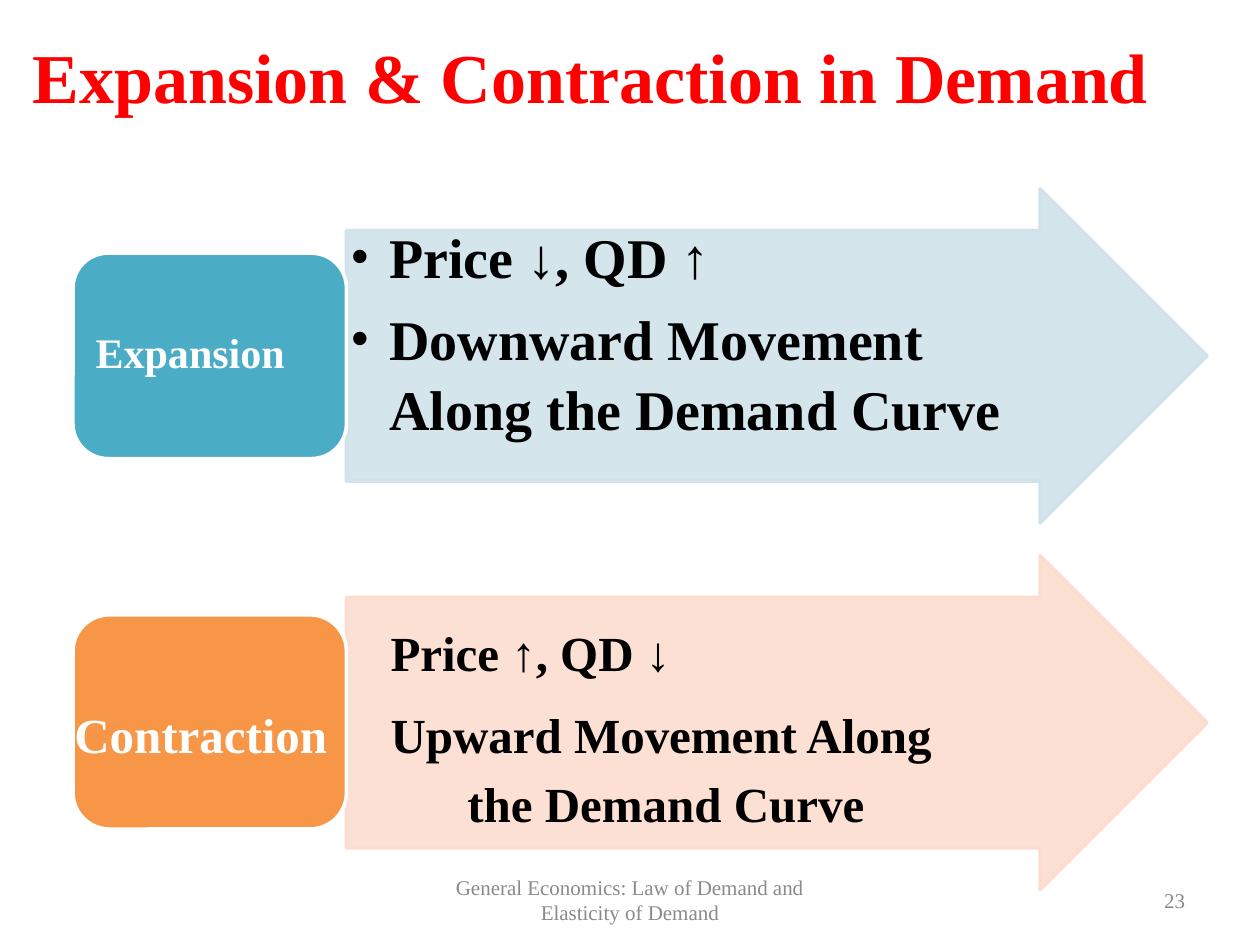
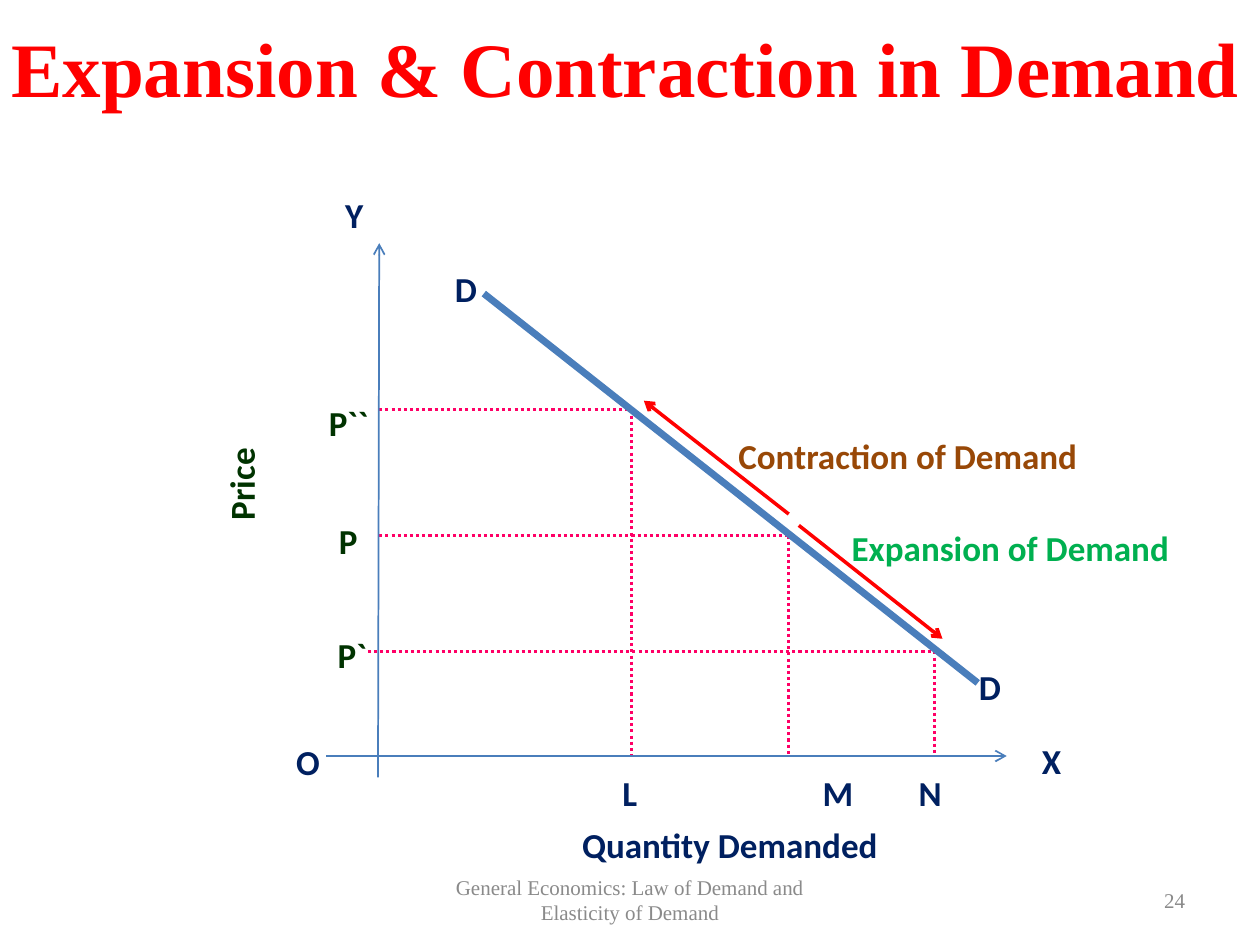
from lxml.etree import SubElement
from pptx import Presentation
from pptx.dml.color import RGBColor
from pptx.enum.dml import MSO_LINE
from pptx.enum.shapes import MSO_CONNECTOR, MSO_SHAPE
from pptx.enum.text import PP_ALIGN
from pptx.oxml.ns import qn
from pptx.util import Pt

SCALE = 9144
SERIF, SANS = "Times New Roman", "Calibri"
RED = RGBColor(0xFF, 0x00, 0x00)
BLACK = RGBColor(0x00, 0x00, 0x00)
WHITE = RGBColor(0xFF, 0xFF, 0xFF)
GREY = RGBColor(0x8A, 0x8A, 0x8A)
TEAL = RGBColor(0x4B, 0xAC, 0xC6)
PALE_TEAL = RGBColor(0xD0, 0xE3, 0xEA)
ORANGE = RGBColor(0xF7, 0x96, 0x46)
PALE_ORANGE = RGBColor(0xFC, 0xDD, 0xCF)
NAVY = RGBColor(0x00, 0x20, 0x60)
DARK_GREEN = RGBColor(0x00, 0x33, 0x00)
GREEN = RGBColor(0x00, 0xB0, 0x50)
BROWN = RGBColor(0x98, 0x48, 0x07)
PINK = RGBColor(0xFF, 0x00, 0x66)
BLUE = RGBColor(0x4A, 0x7E, 0xBB)

TITLE = "Expansion & Contraction in Demand"
FOOTER = ["General Economics: Law of Demand and", "Elasticity of Demand"]

MOVEMENTS = [
    dict(arrow_top=150, arrow_fill=PALE_TEAL, box=(58, 201, 217, 163), box_fill=TEAL,
         label="Expansion", label_box=(76, 258, 190, 42), label_size=24,
         effects=["Price ↓, QD ↑", "Downward Movement Along the Demand Curve"],
         effects_box=(276, 172, 553, 178), inset=5, size=32, line=39.5,
         before=(4, 7.4), indents=((33, -31), (33, -31)), bullet="•"),
    dict(arrow_top=441, arrow_fill=PALE_ORANGE, box=(58, 488, 217, 170), box_fill=ORANGE,
         label="Contraction", label_box=(59, 558, 214, 45), label_size=28,
         effects=["Price ↑, QD ↓", "Upward Movement Along the Demand Curve"],
         effects_box=(310, 488, 450, 174), inset=6, size=28, line=39.2,
         before=(4.2, 7.9), indents=((0, 0), (61, -61)), bullet=None),
]

ORIGIN_X, ORIGIN_Y = 301, 600
DEMAND_POINTS = [(501, 325, ORIGIN_X), (626, 425, ORIGIN_X), (742, 517, 292)]
DEMAND_CURVE = (384, 233, 776, 542)
AXES = [(300, 617, 301, 193), (259, 600, 799, 600)]
MOVES = [(626, 408, 511, 318), (634, 417, 748, 507)]

GRAPH_LABELS = [
    ("O", 235, 587, 30, NAVY),
    ("X", 827, 586, 30, NAVY),
    ("Y", 274, 153, 30, NAVY),
    ("D", 361, 211, 30, NAVY),
    ("D", 777, 527, 30, NAVY),
    ("P``", 261, 318, 45, DARK_GREEN),
    ("P", 269, 411, 30, DARK_GREEN),
    ("P`", 268, 502, 40, DARK_GREEN),
    ("L", 494, 611, 30, NAVY),
    ("M", 653, 611, 40, NAVY),
    ("N", 729, 611, 30, NAVY),
    ("Quantity Demanded", 462, 653, 260, NAVY),
    ("Contraction of Demand", 586, 344, 307, BROWN),
    ("Expansion of Demand", 676, 417, 300, GREEN),
]


def px(*lengths):
    return [length * SCALE for length in lengths]


def add_text(slide, box, lines, size, color, font=SERIF, bold=True, inset=1, before=(1,),
             spacing=(None,), indents=((0, 0),), bullet=None, align=PP_ALIGN.LEFT, vertical=None):
    shape = slide.shapes.add_textbox(*px(*box))
    frame = shape.text_frame
    frame.word_wrap = True
    frame.margin_left = frame.margin_right = frame.margin_bottom = 0
    frame.margin_top = inset * SCALE
    if vertical:
        shape.element.txBody.bodyPr.set("vert", vertical)
    frame.text = "\n".join(lines)
    for index, paragraph in enumerate(frame.paragraphs):
        properties = paragraph._p.get_or_add_pPr()
        margin, indent = px(*indents[index % len(indents)])
        properties.set("marL", str(margin))
        properties.set("indent", str(indent))
        if bullet:
            SubElement(properties, qn("a:buFont"), typeface=font)
            SubElement(properties, qn("a:buChar"), char=bullet)
        paragraph.alignment = align
        paragraph.space_before = Pt(before[index % len(before)])
        line = spacing[index % len(spacing)]
        if line:
            paragraph.line_spacing = Pt(line)
        paragraph.font.name = font
        paragraph.font.size = Pt(size)
        paragraph.font.bold = bold
        paragraph.font.color.rgb = color


def add_block(slide, kind, box, fill, outline, adjustments):
    shape = slide.shapes.add_shape(kind, *px(*box))
    shape.shadow.inherit = False
    for index, value in enumerate(adjustments):
        shape.adjustments[index] = value
    shape.fill.solid()
    shape.fill.fore_color.rgb = fill
    shape.line.color.rgb = outline
    shape.line.width = Pt(2)
    return shape


def add_line(slide, ends, color, width, dotted=False, arrow=False):
    connector = slide.shapes.add_connector(MSO_CONNECTOR.STRAIGHT, *px(*ends))
    connector.line.color.rgb = color
    connector.line.width = Pt(width)
    if dotted:
        connector.line.dash_style = MSO_LINE.ROUND_DOT
    if arrow:
        SubElement(connector.element.spPr.find(qn("a:ln")), qn("a:tailEnd"), type="arrow")
    SubElement(connector.element.spPr, qn("a:effectLst"))


def add_slide(presentation, title_box, title_size):
    slide = presentation.slides.add_slide(presentation.slide_layouts[6])
    add_text(slide, title_box, [TITLE], title_size, RED)
    return slide


def add_footer(slide, number):
    add_text(slide, (345, 695, 310, 42), FOOTER, 12, GREY, bold=False, inset=0,
             before=(0,), spacing=(13.8, None), align=PP_ALIGN.CENTER)
    add_text(slide, (920, 699, 24, 27), [str(number)], 12, GREY, bold=False, inset=6,
             before=(0,), spacing=(13.8,), indents=((4, 0),))


def add_movement(slide, movement):
    arrow = add_block(slide, MSO_SHAPE.RIGHT_ARROW, (275, movement["arrow_top"], 683, 265),
                      movement["arrow_fill"], movement["arrow_fill"], (0.75, 0.5))
    color = arrow.element.spPr.find(qn("a:solidFill")).find(qn("a:srgbClr"))
    SubElement(color, qn("a:alpha"), val="90000")
    add_block(slide, MSO_SHAPE.ROUNDED_RECTANGLE, movement["box"],
              movement["box_fill"], WHITE, (0.17,))
    add_text(slide, movement["label_box"], [movement["label"]], movement["label_size"], WHITE)
    add_text(slide, movement["effects_box"], movement["effects"], movement["size"], BLACK,
             inset=movement["inset"], before=movement["before"],
             spacing=(None, movement["line"]), indents=movement["indents"],
             bullet=movement["bullet"])


def add_graph(slide):
    for quantity, price, start in DEMAND_POINTS:
        add_line(slide, (start, price, quantity, price), PINK, 1.75, dotted=True)
        add_line(slide, (quantity, price, quantity, ORIGIN_Y), PINK, 1.75, dotted=True)
    add_line(slide, DEMAND_CURVE, BLUE, 4)
    for axis in AXES:
        add_line(slide, axis, BLUE, 1, arrow=True)
    for move in MOVES:
        add_line(slide, move, RED, 2, arrow=True)
    for text, left, top, width, color in GRAPH_LABELS:
        add_text(slide, (left, top, width, 36), [text], 20, color, font=SANS)
    add_text(slide, (180, 354, 31, 60), ["Price"], 20, DARK_GREEN, font=SANS, inset=0,
             before=(0,), spacing=(20.1,), indents=((1, 0),), vertical="vert270")


def main():
    presentation = Presentation()
    presentation.slide_width, presentation.slide_height = px(1000, 750)

    movements_slide = add_slide(presentation, (26, 26, 935, 69), 40)
    for movement in MOVEMENTS:
        add_movement(movements_slide, movement)
    add_footer(movements_slide, 23)

    graph_slide = add_slide(presentation, (9, 15, 991, 76), 44)
    add_graph(graph_slide)
    add_footer(graph_slide, 24)

    presentation.save("out.pptx")


if __name__ == "__main__":
    main()
